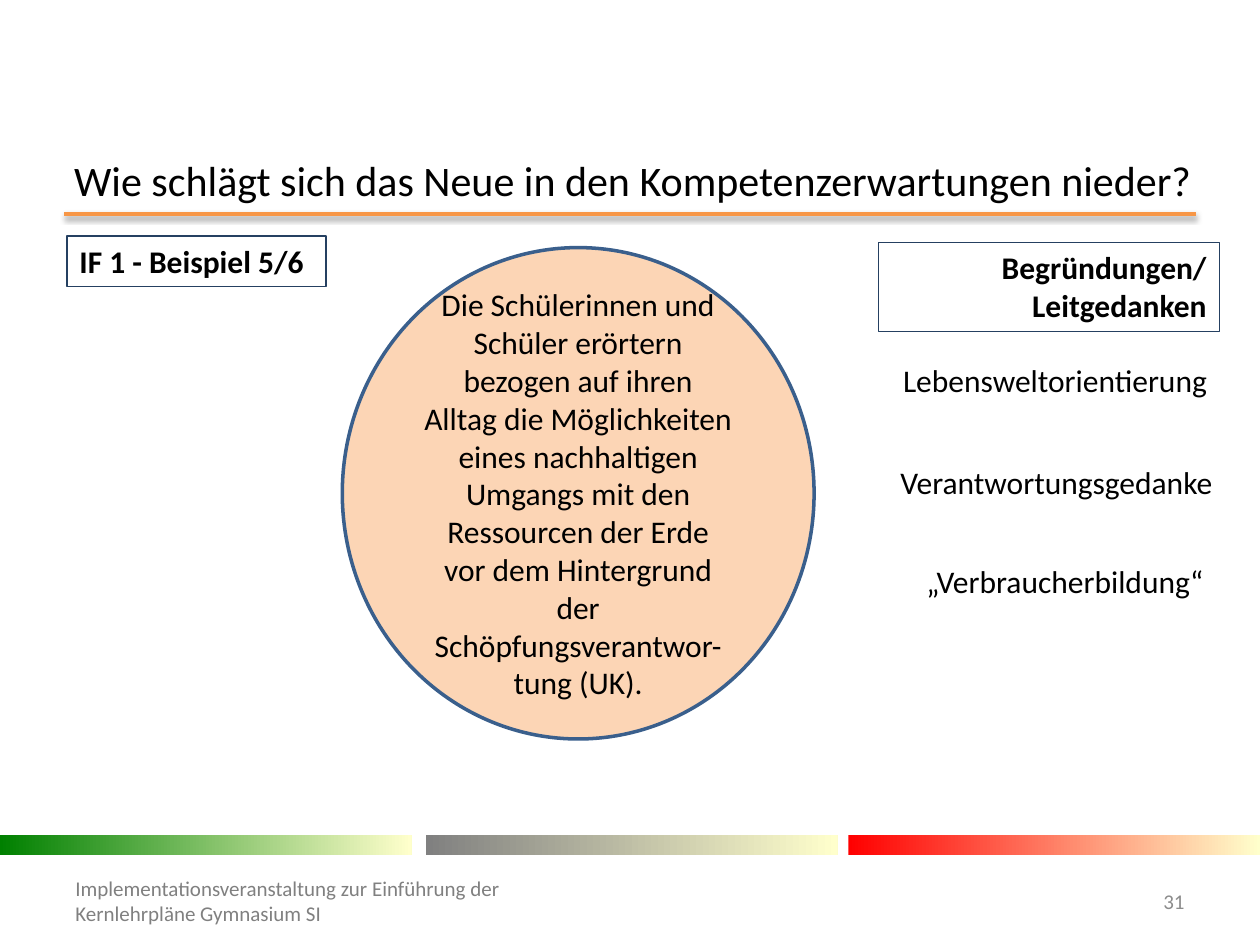
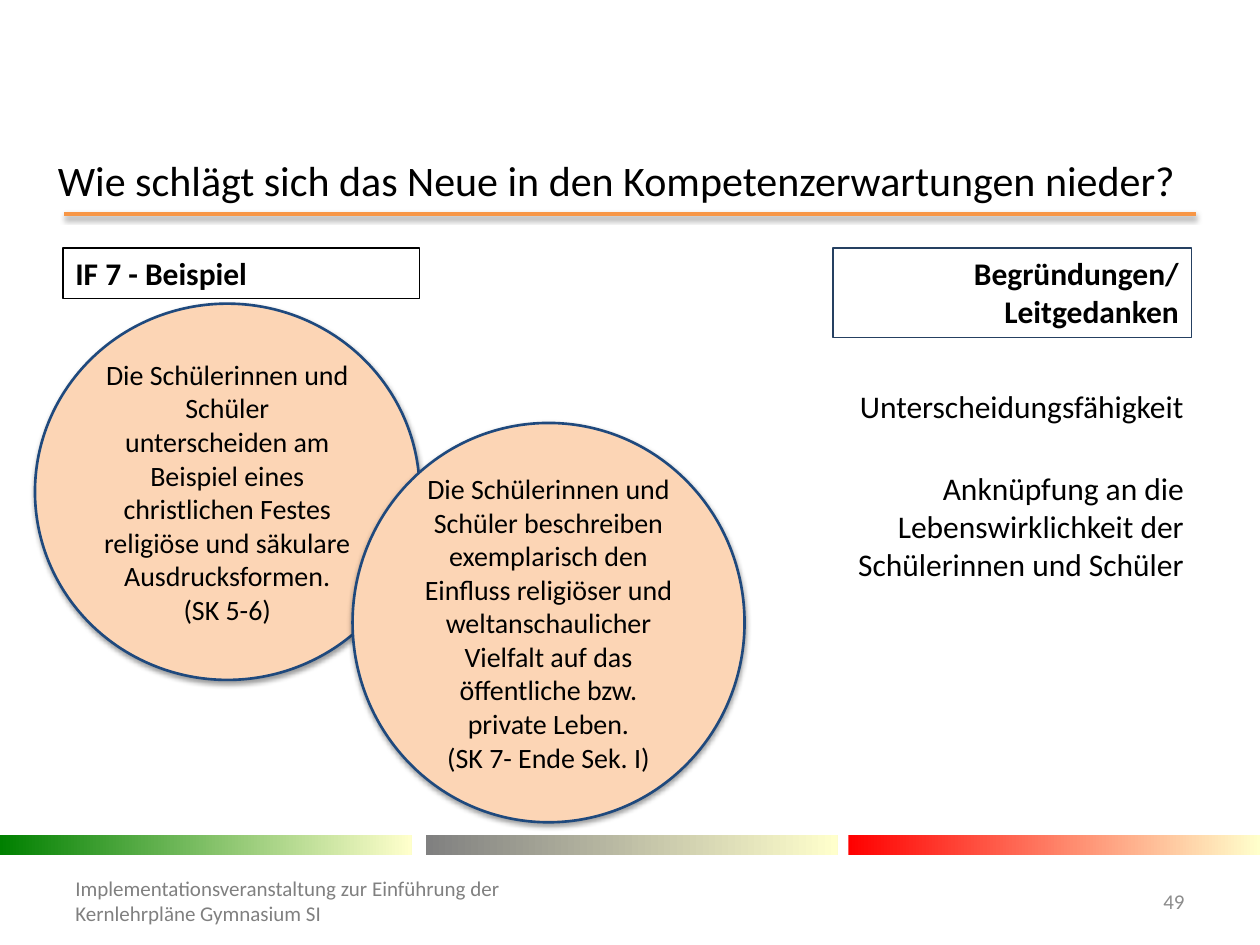
from lxml import etree
from pptx import Presentation
from pptx.dml.color import RGBColor
from pptx.enum.shapes import MSO_CONNECTOR, MSO_SHAPE
from pptx.enum.text import MSO_ANCHOR, PP_ALIGN
from pptx.oxml.ns import qn
from pptx.util import Pt

LEFT, MID, RIGHT = PP_ALIGN.LEFT, PP_ALIGN.CENTER, PP_ALIGN.RIGHT
TOP, CENTRE = MSO_ANCHOR.TOP, MSO_ANCHOR.MIDDLE
RECT, OVAL = MSO_SHAPE.RECTANGLE, MSO_SHAPE.OVAL
STRAIGHT = MSO_CONNECTOR.STRAIGHT

FONT = "Calibri"
HEX = {
    "text": "000000", "foot": "808080", "page": "8C8C8C",
    "rule": "F79646", "peach": "FCD5B5", "cream": "FFFFCC",
    "green": "008000", "grey": "808080", "red": "FF0000",
    "steel": "3A5F8C", "navy": "1F497D", "frame": "254061",
}
TITLE = "Wie schlägt sich das Neue in den Kompetenzerwartungen nieder?"
FOOTER = "Implementationsveranstaltung zur Einführung der Kernlehrpläne Gymnasium SI"
REASONS = ["Begründungen/", "Leitgedanken"]
BANDS = [(0, "green"), (243.5, "grey"), (484.8, "red")]

SLIDES = [
    {
        "page": "31",
        "title": (35.3, 705.6),
        "labels": [
            (["IF 1 - Beispiel 5/6"], (38.3, 134.8, 148, 29), "frame", LEFT),
            (REASONS, (502, 138.4, 194.7, 51), "frame", RIGHT),
        ],
        "notes": [
            ("Lebensweltorientierung", (495.3, 202.5, 201.6, 29)),
            ("Verantwortungsgedanke", (479, 260.8, 221, 29)),
            ("„Verbraucherbildung“", (496.8, 317.7, 198, 29)),
        ],
        "circles": [
            (["Die Schülerinnen und Schüler erörtern bezogen auf ihren Alltag "
              "die Möglichkeiten eines nachhaltigen Umgangs mit den Ressourcen "
              "der Erde vor dem Hintergrund der Schöpfungsverantwor-tung (UK)."],
             (195.6, 141.5, 269.6, 280.8)),
        ],
        "style": {"size": 18, "edge": "steel", "weight": 2, "shade": False},
    },
    {
        "page": "49",
        "title": (26, 657.4),
        "labels": [
            (["IF 7 - Beispiel"], (36, 141.8, 203.8, 29), "text", LEFT),
            (REASONS, (476, 141.8, 204.8, 51), "frame", RIGHT),
        ],
        "notes": [
            ("Unterscheidungsfähigkeit", (468, 217.8, 215.5, 29)),
            ("Anknüpfung an die Lebenswirklichkeit der Schülerinnen und Schüler",
             (479.5, 264.6, 204.2, 72.7)),
        ],
        "circles": [
            (["Die Schülerinnen und Schüler unterscheiden am Beispiel eines "
              "christlichen Festes religiöse und säkulare Ausdrucksformen.",
              "(SK 5-6)"], (20, 173.5, 219.8, 215)),
            (["Die Schülerinnen und Schüler beschreiben exemplarisch den Einfluss "
              "religiöser und weltanschaulicher Vielfalt auf das öffentliche bzw. "
              "private Leben.", "(SK 7- Ende Sek. I)"], (201.5, 241.7, 224, 228.2)),
        ],
        "style": {"size": 16, "edge": "navy", "weight": 1.5, "shade": True},
    },
]


def rgb(name):
    return RGBColor.from_string(HEX[name])


def points(box):
    return [Pt(n) for n in box]


def shade(shape, show):
    effects = etree.SubElement(shape._element.spPr, qn("a:effectLst"))
    if show:
        outer = etree.SubElement(
            effects, qn("a:outerShdw"), blurRad=str(Pt(3.1)), dist=str(Pt(1.6)),
            dir="5400000", rotWithShape="0")
        tone = etree.SubElement(outer, qn("a:srgbClr"), val=HEX["text"])
        etree.SubElement(tone, qn("a:alpha"), val="38000")


def write(shape, lines, size, align=LEFT, anchor=TOP, color="text", bold=False):
    frame = shape.text_frame
    frame.word_wrap = True
    frame.vertical_anchor = anchor
    frame.text = "\n".join(lines)
    for para in frame.paragraphs:
        para.alignment = align
        font = para.font
        font.name, font.size, font.bold = FONT, Pt(size), bold
        font.color.rgb = rgb(color)


def add_text(slide, box, lines, size, **look):
    write(slide.shapes.add_textbox(*points(box)), lines, size, **look)


def add_form(slide, kind, box, fill, edge, weight, shadow=False):
    form = slide.shapes.add_shape(kind, *points(box))
    if fill:
        form.fill.solid()
        form.fill.fore_color.rgb = rgb(fill)
    else:
        form.fill.background()
    form.line.color.rgb = rgb(edge)
    form.line.width = Pt(weight)
    shade(form, shadow)
    return form


def add_frame(slide, title, page):
    rule = slide.shapes.add_connector(STRAIGHT, *points((36.7, 122.4, 683.3, 122.4)))
    rule.line.color.rgb = rgb("rule")
    rule.line.width = Pt(2)
    shade(rule, True)
    for left, tone in BANDS:
        band = slide.shapes.add_shape(RECT, *points((left, 477.2, 235.2, 11.5)))
        band.fill.gradient()
        band.fill.gradient_angle = 0
        for stop, name in zip(band.fill.gradient_stops, (tone, "cream")):
            stop.color.rgb = rgb(name)
        band.line.fill.background()
        shade(band, False)
    left, width = title
    add_text(slide, (left, 88.6, width, 28), [TITLE], 24, anchor=CENTRE)
    add_text(slide, (36, 500.4, 290, 28.4), [FOOTER], 12, anchor=CENTRE, color="foot")
    add_text(slide, (638, 500.4, 46, 28.8), [page], 12,
             align=RIGHT, anchor=CENTRE, color="page")


def build(deck, data):
    slide = deck.slides.add_slide(deck.slide_layouts[6])
    add_frame(slide, data["title"], data["page"])
    style = data["style"]
    for lines, box in data["circles"]:
        oval = add_form(slide, OVAL, box, "peach", style["edge"],
                        style["weight"], style["shade"])
        write(oval, lines, style["size"], align=MID, anchor=CENTRE)
    for lines, box, edge, align in data["labels"]:
        label = add_form(slide, RECT, box, None, edge, 0.75)
        write(label, lines, 18, align=align, bold=True)
    for note, box in data["notes"]:
        add_text(slide, box, [note], 18, align=RIGHT)


def main():
    deck = Presentation()
    deck.slide_width, deck.slide_height = Pt(720), Pt(540)
    for data in SLIDES:
        build(deck, data)
    deck.save("out.pptx")


if __name__ == "__main__":
    main()
